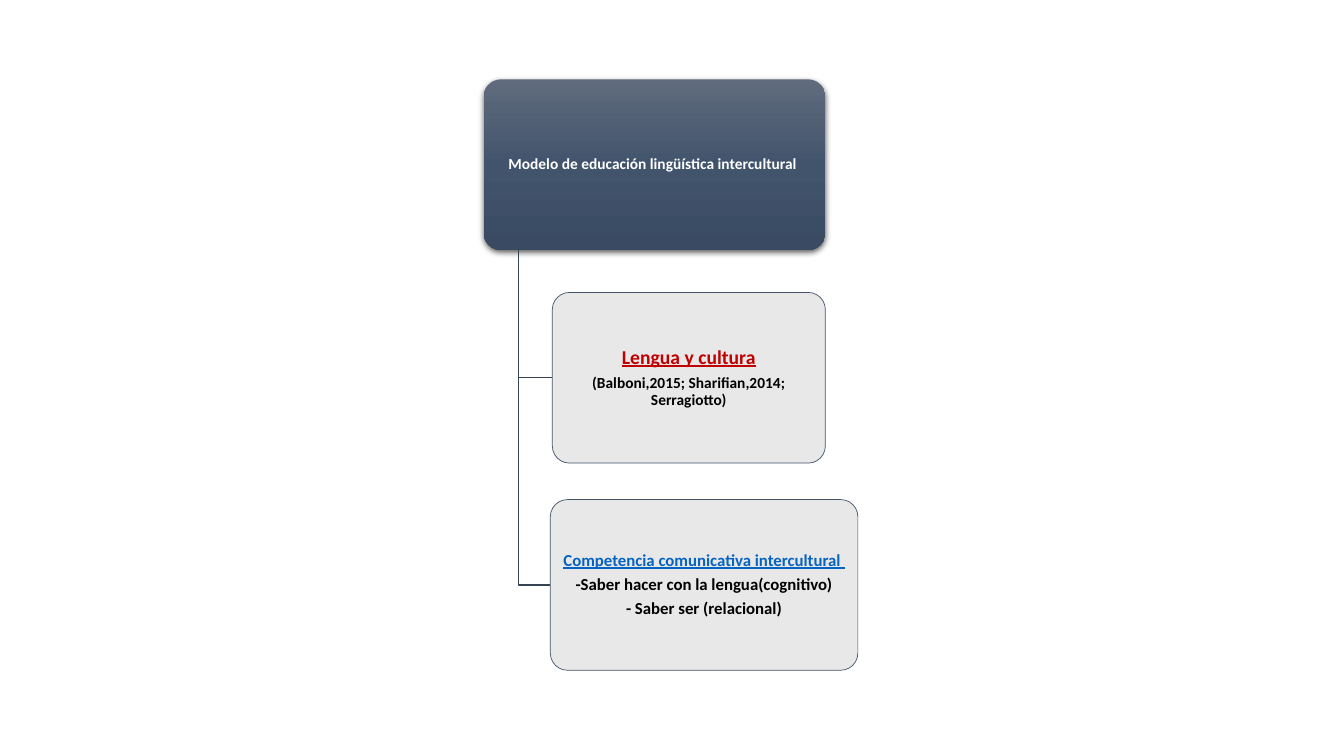
from lxml.etree import SubElement
from pptx import Presentation
from pptx.dml.color import RGBColor
from pptx.enum.shapes import MSO_SHAPE
from pptx.enum.text import MSO_ANCHOR, PP_ALIGN
from pptx.oxml.ns import qn
from pptx.util import Cm, Pt

WHITE = RGBColor(0xFF, 0xFF, 0xFF)
BLACK = RGBColor(0x00, 0x00, 0x00)
RED = RGBColor(0xC0, 0x00, 0x00)
BLUE = RGBColor(0x05, 0x63, 0xC1)
PALE_GREY = RGBColor(0xE7, 0xE6, 0xE6)
SLATE = RGBColor(0x44, 0x54, 0x6A)
DARK_SLATE = RGBColor(0x36, 0x43, 0x55)
ROOT_GRADIENT = [
    (0, RGBColor(0x60, 0x6B, 0x7D)),
    (50000, RGBColor(0x42, 0x54, 0x6C)),
    (100000, RGBColor(0x39, 0x4A, 0x62)),
]

BOX_HEIGHT = 4.3
ROOT_LEFT, ROOT_TOP, ROOT_WIDTH = 12.19, 2, 8.61
TRUNK_X = 13.06

# left, top, width, then lines of (text, size, colour, underline)
BRANCHES = [
    (13.92, 7.37, 6.88, [
        ("Lengua y cultura", 14, RED, True),
        ("(Balboni,2015; Sharifian,2014; Serragiotto)", 11, BLACK, False),
    ]),
    (13.87, 12.59, 7.75, [
        ("Competencia comunicativa intercultural ", 12, BLUE, True),
        ("-Saber hacer con la lengua(cognitivo)", 12, BLACK, False),
        ("- Saber ser (relacional)", 12, BLACK, False),
    ]),
]


def add_box(left, top, width, side_inset):
    box = slide.shapes.add_shape(
        MSO_SHAPE.ROUNDED_RECTANGLE, Cm(left), Cm(top), Cm(width), Cm(BOX_HEIGHT))
    box.adjustments[0] = 0.1
    box.shadow.inherit = False
    frame_format = {
        "word_wrap": True,
        "vertical_anchor": MSO_ANCHOR.MIDDLE,
        "margin_left": Cm(side_inset),
        "margin_right": Cm(side_inset),
        "margin_top": Cm(0.05),
        "margin_bottom": Cm(0.05),
    }
    for name, value in frame_format.items():
        setattr(box.text_frame, name, value)
    return box


def write_lines(frame, lines):
    for index, (text, size, colour, underline) in enumerate(lines):
        paragraph = frame.add_paragraph() if index else frame.paragraphs[0]
        paragraph.alignment = PP_ALIGN.CENTER
        paragraph.line_spacing = 0.9
        paragraph.space_after = Pt(0.35 * size)
        run = paragraph.add_run()
        run.text = text
        run.font.color.rgb = colour
        font_format = {"name": "Calibri", "size": Pt(size), "bold": True,
                       "underline": underline}
        for name, value in font_format.items():
            setattr(run.font, name, value)


prs = Presentation()
prs.slide_width = Cm(33.87)
prs.slide_height = Cm(19.05)
slide = prs.slides.add_slide(prs.slide_layouts[6])

# Root box with a gradient and a soft shadow below
root = add_box(ROOT_LEFT, ROOT_TOP, ROOT_WIDTH, 0.05)
root.line.fill.background()
root.fill.gradient()
root.fill.gradient_angle = 270
stops = root._element.spPr.find(".//" + qn("a:gsLst"))
for stop in list(stops):
    stops.remove(stop)
for position, colour in ROOT_GRADIENT:
    stop = SubElement(stops, qn("a:gs"), pos=str(position))
    SubElement(stop, qn("a:srgbClr"), val=str(colour))

effects = root._element.spPr.find(qn("a:effectLst"))
shadow = SubElement(effects, qn("a:outerShdw"), blurRad=str(Pt(4.5)),
                    dist=str(Pt(1.5)), dir="5400000", algn="ctr", rotWithShape="0")
shadow_colour = SubElement(shadow, qn("a:srgbClr"), val=str(BLACK))
SubElement(shadow_colour, qn("a:alpha"), val="63000")
write_lines(root.text_frame,
            [("Modelo de educación lingüística intercultural ", 11, WHITE, False)])

# Each branch hangs from the root by an elbow line
for left, top, width, lines in BRANCHES:
    middle = top + BOX_HEIGHT / 2
    builder = slide.shapes.build_freeform(Cm(TRUNK_X), Cm(ROOT_TOP + BOX_HEIGHT))
    builder.add_line_segments(
        [(Cm(TRUNK_X), Cm(middle)), (Cm(left), Cm(middle))], close=False)
    elbow = builder.convert_to_shape()
    elbow.shadow.inherit = False
    elbow.fill.background()
    elbow.line.color.rgb = DARK_SLATE
    elbow.line.width = Pt(1)

    branch = add_box(left, top, width, 0.08)
    branch.fill.solid()
    branch.fill.fore_color.rgb = PALE_GREY
    fill_colour = branch._element.spPr.find(qn("a:solidFill")).find(qn("a:srgbClr"))
    SubElement(fill_colour, qn("a:alpha"), val="90000")
    branch.line.color.rgb = SLATE
    branch.line.width = Pt(0.5)
    write_lines(branch.text_frame, lines)

prs.save("out.pptx")
